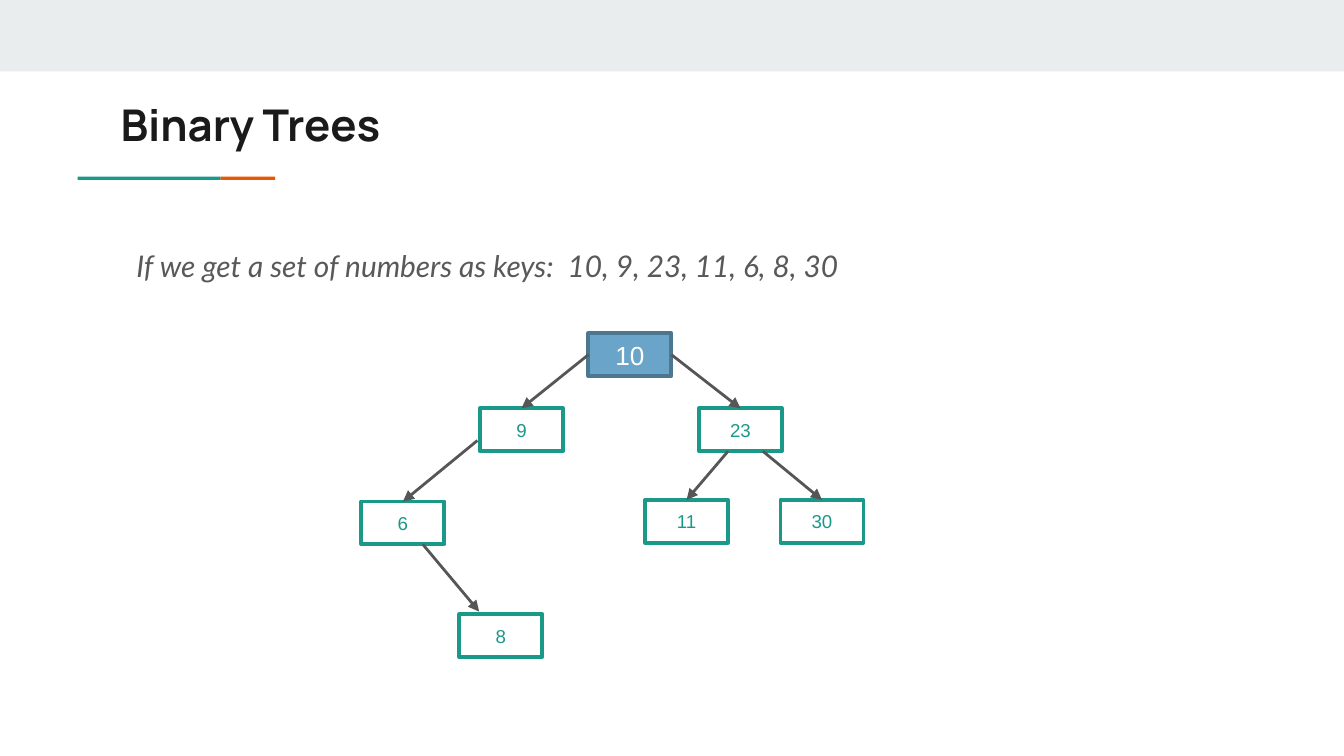
import lxml.etree
import pptx
import pptx.dml.color
import pptx.enum.shapes
import pptx.enum.text
import pptx.oxml.ns
import pptx.util
from pptx.util import Cm

TEAL, ORANGE, WHITE = "1A9988", "EB5600", "FFFFFF"
NODE_WIDTH, NODE_HEIGHT = Cm(1.57), Cm(0.81)
TOP, LEFT, RIGHT = 0, 1, 3

# Node key: offset from the tree's corner in centimetres
NODES = {
    "10": (4.29, 0),
    "9": (2.24, 1.42),
    "23": (6.38, 1.42),
    "6": (0, 3.18),
    "11": (5.36, 3.15),
    "30": (7.92, 3.15),
    "8": (1.85, 5.31),
}

# Parent, child, start and end: a connection site, or fractions of the node's size
EDGES = [
    ("10", "9", LEFT, TOP),
    ("10", "23", RIGHT, TOP),
    ("9", "6", (-0.03, 0.75), TOP),
    ("23", "11", (0.35, 1), TOP),
    ("23", "30", (0.77, 1), TOP),
    ("6", "8", (0.74, 1), (0.24, -0.06)),
]


def color(value):
    return pptx.dml.color.RGBColor.from_string(value)


def style_text(paragraph, font_name, size, font_color, bold=False, italic=False):
    for run in paragraph.runs:
        run.font.name = font_name
        run.font.size = pptx.util.Pt(size)
        run.font.color.rgb = color(font_color)
        run.font.bold = bold
        run.font.italic = italic


def add_rectangle(slide, left, top, width, height, fill, line=None):
    shape = slide.shapes.add_shape(
        pptx.enum.shapes.MSO_SHAPE.RECTANGLE, left, top, width, height)
    shape.shadow.inherit = False
    shape.fill.solid()
    shape.fill.fore_color.rgb = color(fill)
    if line:
        shape.line.color.rgb = color(line)
        shape.line.width = pptx.util.Pt(2)
    else:
        shape.line.fill.background()
    return shape


def add_text(slide, left, top, width, height, text, indent=Cm(0)):
    text_frame = slide.shapes.add_textbox(left, top, width, height).text_frame
    text_frame.word_wrap = True
    text_frame.margin_left = Cm(0.25) + indent
    text_frame.margin_right = text_frame.margin_top = text_frame.margin_bottom = Cm(0.25)
    text_frame.text = text
    return text_frame.paragraphs[0]


def add_header(slide, left, top, width):
    # Band across the top
    add_rectangle(slide, left, top, width, Cm(1.35), "E9EDEE")
    # Title
    title = add_text(slide, left + Cm(2.03), top + Cm(1.6), Cm(21.36), Cm(1.5), "Binary Trees")
    style_text(title, "Manrope", 23.4, "1A1A1A", bold=True)
    # Two-coloured rule under the title
    rule_left, rule_top, rule_height = left + Cm(1.47), top + Cm(3.34), Cm(0.06)
    teal_width = Cm(2.7)
    add_rectangle(slide, rule_left, rule_top, teal_width, rule_height, TEAL)
    add_rectangle(slide, rule_left + teal_width, rule_top, Cm(1.03), rule_height, ORANGE)


def add_body(slide, left, top, width, height):
    paragraph = add_text(slide, left, top, width, height,
                         "If we get a set of numbers as keys:  10, 9, 23, 11, 6, 8, 30",
                         indent=Cm(0.3))
    paragraph.line_spacing = 1.15
    style_text(paragraph, "Lato", 16, "595959", italic=True)


def add_node(slide, left, top, key, is_root):
    fill, line, font_color, size = (
        ("6AA4C8", "4D7791", WHITE, 14) if is_root else (WHITE, TEAL, TEAL, 10))
    shape = add_rectangle(slide, left, top, NODE_WIDTH, NODE_HEIGHT, fill, line)
    text_frame = shape.text_frame
    text_frame.text = key
    text_frame.vertical_anchor = pptx.enum.text.MSO_ANCHOR.MIDDLE
    paragraph = text_frame.paragraphs[0]
    paragraph.alignment = pptx.enum.text.PP_ALIGN.CENTER
    style_text(paragraph, "Arial", size, font_color)
    return shape


def point_on(shape, place):
    across, down = place if isinstance(place, tuple) else (0.5, 0)
    return int(shape.left + across * shape.width), int(shape.top + down * shape.height)


def add_arrow(slide, parent, child, start, end):
    connector = slide.shapes.add_connector(
        pptx.enum.shapes.MSO_CONNECTOR.STRAIGHT,
        *point_on(parent, start), *point_on(child, end))
    if isinstance(start, int):
        connector.begin_connect(parent, start)
    if isinstance(end, int):
        connector.end_connect(child, end)
    connector.line.color.rgb = color("565656")
    connector.line.width = pptx.util.Pt(1.5)
    # Arrowhead at the child, and no shadow
    line = connector.line._get_or_add_ln()
    lxml.etree.SubElement(line, pptx.oxml.ns.qn("a:tailEnd"), type="triangle")
    lxml.etree.SubElement(connector._element.spPr, pptx.oxml.ns.qn("a:effectLst"))


def add_tree(slide, left, top):
    shapes = {
        key: add_node(slide, left + Cm(across), top + Cm(down), key, key == "10")
        for key, (across, down) in NODES.items()
    }
    for parent, child, start, end in EDGES:
        add_arrow(slide, shapes[parent], shapes[child], start, end)


def main():
    presentation = pptx.Presentation()
    presentation.slide_width = Cm(25.4)
    presentation.slide_height = Cm(14.29)
    slide = presentation.slides.add_slide(presentation.slide_layouts[6])
    add_header(slide, Cm(0), Cm(0), presentation.slide_width)
    add_body(slide, Cm(2.03), Cm(4.34), Cm(21.36), Cm(7.72))
    add_tree(slide, Cm(6.83), Cm(6.3))
    presentation.save("out.pptx")


if __name__ == "__main__":
    main()
